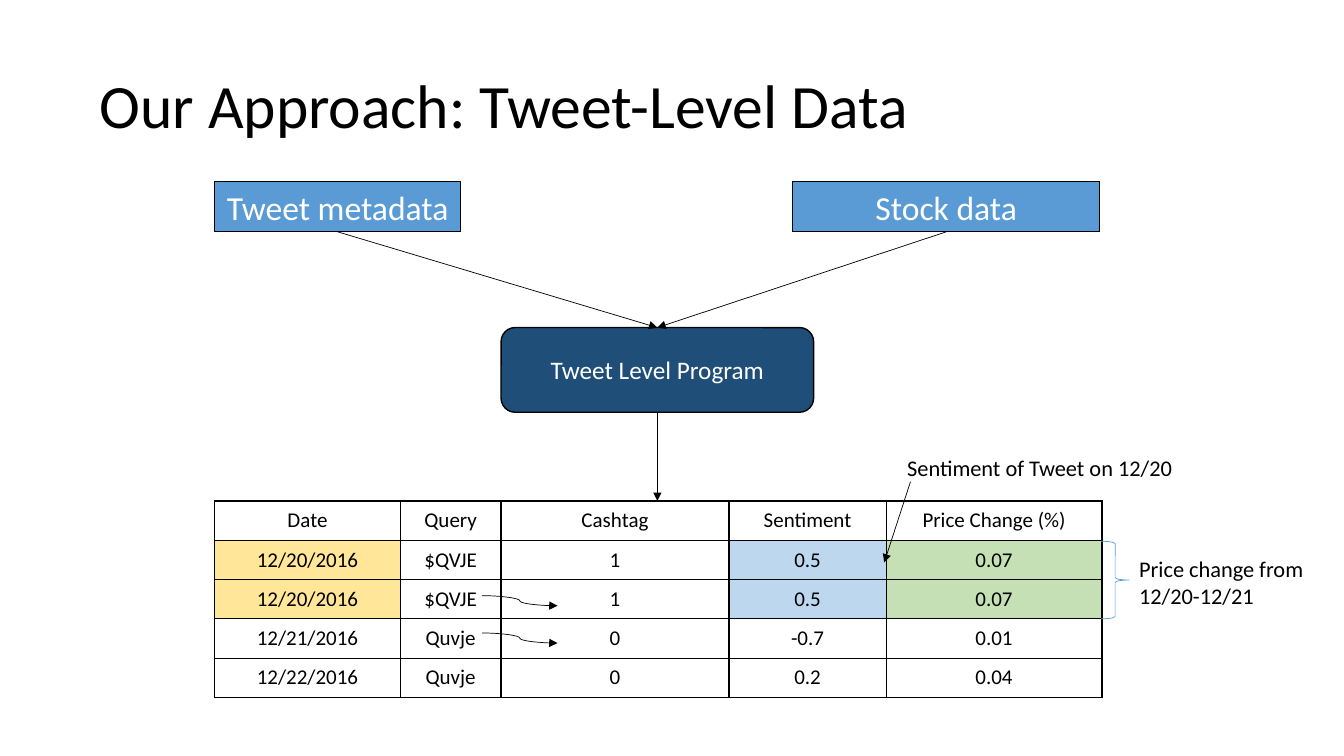
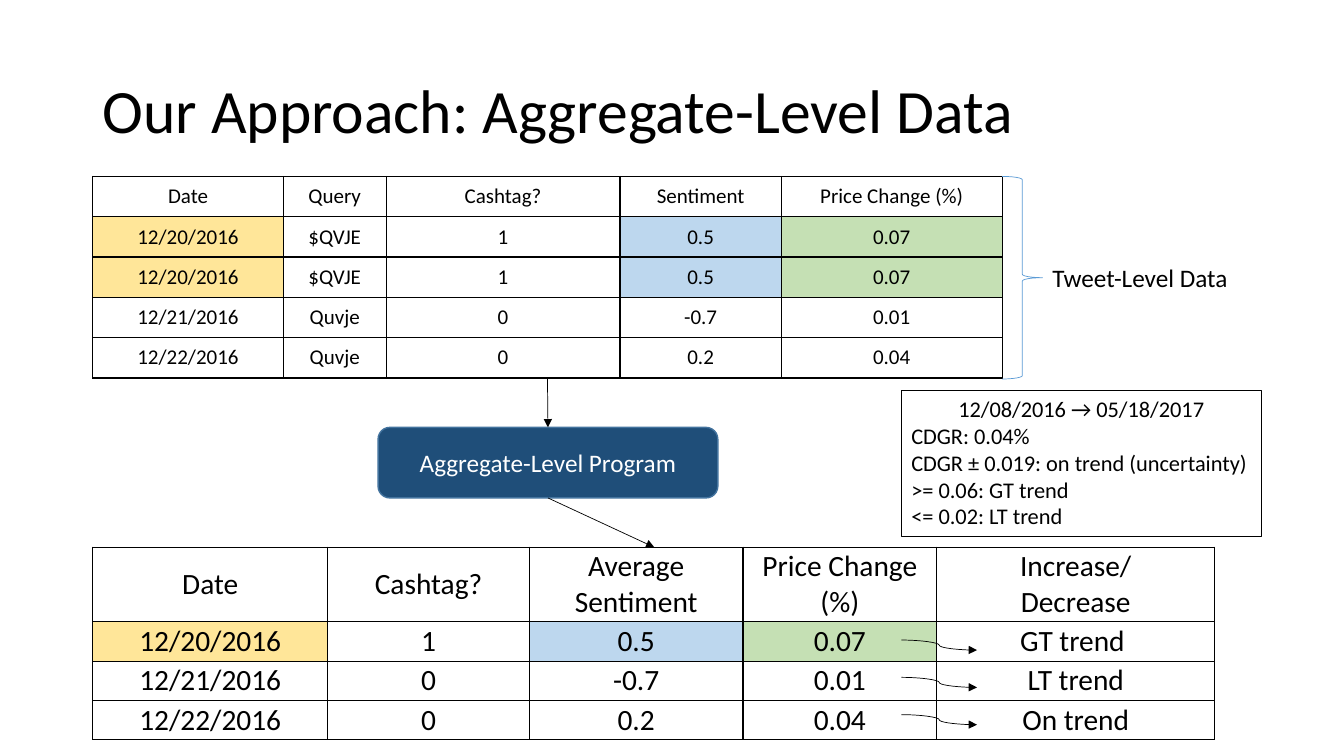
from lxml import etree
from pptx import Presentation
from pptx.dml.color import RGBColor
from pptx.enum.shapes import MSO_CONNECTOR, MSO_SHAPE
from pptx.enum.text import MSO_ANCHOR, PP_ALIGN
from pptx.oxml.ns import qn
from pptx.util import Inches, Pt

FONT = "Calibri"
COLORS = {
    "black": "000000",
    "white": "FFFFFF",
    "blue": "5B9BD5",
    "navy": "1F4E79",
    "steel": "43739E",
    "yellow": "FFE699",
    "pale_blue": "BDD7EE",
    "green": "C5E0B4",
}
HIGHLIGHT_DATE = "12/20/2016"
HIGHLIGHTS = {
    "Date": "yellow",
    "Sentiment": "pale_blue",
    "Average Sentiment": "pale_blue",
    "Price Change (%)": "green",
}

TWEET_ROWS = [
    ("12/20/2016", "$QVJE", "1", "0.5", "0.07"),
    ("12/20/2016", "$QVJE", "1", "0.5", "0.07"),
    ("12/21/2016", "Quvje", "0", "-0.7", "0.01"),
    ("12/22/2016", "Quvje", "0", "0.2", "0.04"),
]
TWEET_TABLE = [("Date", "Query", "Cashtag", "Sentiment", "Price Change (%)")] + TWEET_ROWS
TWEET_TABLE_RECAP = [("Date", "Query", "Cashtag?", "Sentiment", "Price Change (%)")] + TWEET_ROWS
AGGREGATE_TABLE = [
    ("Date", "Cashtag?", "Average Sentiment", "Price Change (%)", "Increase/\nDecrease"),
    ("12/20/2016", "1", "0.5", "0.07", "GT trend "),
    ("12/21/2016", "0", "-0.7", "0.01", "LT trend"),
    ("12/22/2016", "0", "0.2", "0.04", "On trend"),
]
TREND_RULES = [
    "12/08/2016 → 05/18/2017",
    "CDGR: 0.04%",
    "CDGR ± 0.019: on trend (uncertainty)",
    ">= 0.06: GT trend",
    "<= 0.02: LT trend",
]
CURVE_STEP = 0.37


def rgb(name):
    return RGBColor.from_string(COLORS[name])


def write(frame, text, size, color="black", align=PP_ALIGN.LEFT):
    frame.text = text
    for para in frame.paragraphs:
        para.alignment = align
        for span in para.runs:
            span.font.name = FONT
            span.font.size = Pt(size)
            span.font.color.rgb = rgb(color)


def add_text(page, text, area, size, wrap=True):
    box = page.shapes.add_textbox(*map(Inches, area))
    box.text_frame.word_wrap = wrap
    write(box.text_frame, text, size)
    return box


def add_page(deck, title, left, top):
    page = deck.slides.add_slide(deck.slide_layouts[6])
    frame = add_text(page, title, (left, top, 11.5, 1.45), 44).text_frame
    frame.vertical_anchor = MSO_ANCHOR.MIDDLE
    frame.paragraphs[0].line_spacing = 0.9
    return page


def add_shape(page, kind, area, line, width, fill=None):
    shape = page.shapes.add_shape(kind, *map(Inches, area))
    shape.shadow.inherit = False
    shape.line.color.rgb = rgb(line)
    shape.line.width = Pt(width)
    if fill:
        shape.fill.solid()
        shape.fill.fore_color.rgb = rgb(fill)
    else:
        shape.fill.background()
    return shape


def add_box(page, kind, text, area, fill, size, line="black", width=0.75):
    box = add_shape(page, kind, area, line, width, fill)
    box.text_frame.word_wrap = True
    box.text_frame.vertical_anchor = MSO_ANCHOR.MIDDLE
    write(box.text_frame, text, size, "white", PP_ALIGN.CENTER)
    return box


def add_brace(page, area):
    add_shape(page, MSO_SHAPE.RIGHT_BRACE, area, "blue", 0.5)


def add_arrow(page, start, end, source=None, target=None, kind=MSO_CONNECTOR.STRAIGHT):
    """Draw an arrow, joined to the source's bottom and the target's top if given."""
    arrow = page.shapes.add_connector(kind, *map(Inches, start + end))
    if source:
        arrow.begin_connect(source, 2)
    if target:
        arrow.end_connect(target, 0)
    arrow.line.color.rgb = rgb("black")
    arrow.line.width = Pt(0.5)
    etree.SubElement(arrow.line._get_or_add_ln(), qn("a:tailEnd"), type="triangle")
    etree.SubElement(arrow._element.spPr, qn("a:effectLst"))


def add_curves(page, left, top, count):
    for index in range(count):
        y = top + index * CURVE_STEP
        add_arrow(page, (left, y), (left + 0.75, y + 0.1), kind=MSO_CONNECTOR.CURVE)


def add_borders(cell):
    properties = cell._tc.get_or_add_tcPr()
    for side in ("lnL", "lnR", "lnT", "lnB"):
        line = etree.SubElement(properties, qn(f"a:{side}"), w=str(Pt(1)))
        fill = etree.SubElement(line, qn("a:solidFill"))
        etree.SubElement(fill, qn("a:srgbClr"), val=COLORS["black"])


def add_data_table(page, rows, left, top, widths, heights, size, margins):
    area = (left, top, sum(widths), sum(heights))
    table = page.shapes.add_table(len(rows), len(widths), *map(Inches, area)).table
    table.first_row = table.horz_banding = False
    for column, width in zip(table.columns, widths):
        column.width = Inches(width)
    for row, height in zip(table.rows, heights):
        row.height = Inches(height)
    side, edge = map(Inches, margins)
    for r, values in enumerate(rows):
        for c, value in enumerate(values):
            cell = table.cell(r, c)
            cell.margin_left = cell.margin_right = side
            cell.margin_top = cell.margin_bottom = edge
            cell.vertical_anchor = MSO_ANCHOR.MIDDLE
            write(cell.text_frame, value, size, align=PP_ALIGN.CENTER)
            add_borders(cell)
            highlight = HIGHLIGHTS.get(rows[0][c])
            if highlight and values[0] == HIGHLIGHT_DATE:
                cell.fill.solid()
                cell.fill.fore_color.rgb = rgb(highlight)
            else:
                cell.fill.background()


def build_tweet_level(deck):
    page = add_page(deck, "Our Approach: Tweet-Level Data", 0.89, 0.35)
    add_data_table(page, TWEET_TABLE, 2.13, 4.97, (1.84, 1, 2.26, 1.56, 2.14),
                   [0.39] * 5, 15, (0.03, 0.02))
    add_text(page, "Price change from 12/20-12/21", (11.2, 5.46, 1.86, 0.64), 16)
    add_brace(page, (10.92, 5.37, 0.28, 0.77))

    tweets = add_box(page, MSO_SHAPE.RECTANGLE, "Tweet metadata",
                     (2.13, 1.8, 2.44, 0.5), "blue", 24)
    stocks = add_box(page, MSO_SHAPE.RECTANGLE, "Stock data",
                     (7.86, 1.8, 3.05, 0.5), "blue", 24)
    program = add_box(page, MSO_SHAPE.ROUNDED_RECTANGLE, "Tweet Level Program",
                      (4.97, 3.25, 3.1, 0.84), "navy", 18, width=1)
    add_arrow(page, (3.35, 2.3), (6.52, 3.25), tweets, program)
    add_arrow(page, (9.39, 2.3), (6.52, 3.25), stocks, program)
    add_arrow(page, (6.52, 4.09), (6.52, 4.97), program)

    add_arrow(page, (9.03, 4.78), (8.77, 5.58))
    add_text(page, "Sentiment of Tweet on 12/20", (8.9, 4.46, 2.87, 0.37), 16, wrap=False)
    add_curves(page, 4.78, 5.91, 2)


def build_aggregate_level(deck):
    page = add_page(deck, "Our Approach: Aggregate-Level Data", 0.92, 0.4)
    add_data_table(page, AGGREGATE_TABLE, 0.92, 5.43, (2.33, 2, 2.12, 1.92, 2.76),
                   [0.74] + [0.39] * 3, 21, (0.03, 0.01))
    add_curves(page, 8.94, 6.35, 3)

    rules = add_shape(page, MSO_SHAPE.RECTANGLE, (8.94, 3.87, 3.57, 1.45), "black", 0.75)
    rules.text_frame.word_wrap = True
    rules.text_frame.vertical_anchor = MSO_ANCHOR.TOP
    write(rules.text_frame, "\n".join(TREND_RULES), 16)
    rules.text_frame.paragraphs[0].alignment = PP_ALIGN.CENTER

    program = add_box(page, MSO_SHAPE.ROUNDED_RECTANGLE, "Aggregate-Level Program",
                      (3.75, 4.24, 3.37, 0.7), "navy", 18, "steel", 1)
    add_data_table(page, TWEET_TABLE_RECAP, 0.92, 1.75, (1.89, 1.02, 2.32, 1.6, 2.19),
                   [0.4] * 5, 15, (0.04, 0.02))
    add_arrow(page, (5.43, 3.76), (5.43, 4.24), target=program)
    add_arrow(page, (5.43, 4.94), (6.49, 5.43), program)
    add_text(page, "Tweet-Level Data", (10.34, 2.55, 1.96, 0.4), 18, wrap=False)
    add_brace(page, (9.94, 1.75, 0.4, 2.01))


def main():
    deck = Presentation()
    deck.slide_width = Inches(13.33)
    deck.slide_height = Inches(7.5)
    build_tweet_level(deck)
    build_aggregate_level(deck)
    deck.save("out.pptx")


if __name__ == "__main__":
    main()
